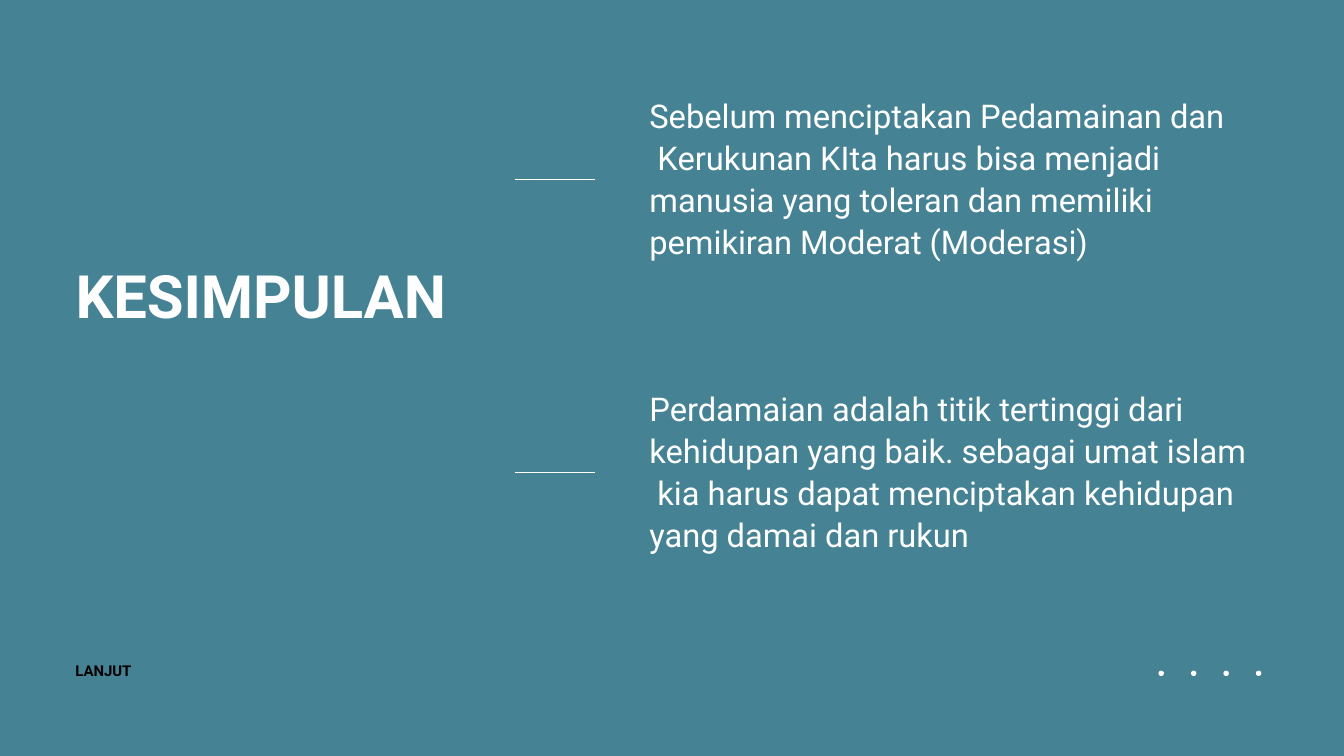
"""Build the KESIMPULAN (conclusion) slide."""
from math import cos, pi, sin

from lxml import etree
from pptx import Presentation
from pptx.dml.color import RGBColor
from pptx.enum.shapes import MSO_CONNECTOR, MSO_SHAPE
from pptx.enum.text import MSO_ANCHOR, MSO_AUTO_SIZE, PP_ALIGN
from pptx.oxml.ns import qn
from pptx.util import Inches, Pt

STRAIGHT, RECT = MSO_CONNECTOR.STRAIGHT, MSO_SHAPE.RECTANGLE
TOP, LEFT = MSO_ANCHOR.TOP, PP_ALIGN.LEFT
NO_FIT = MSO_AUTO_SIZE.NONE

HEADING = "KESIMPULAN"
STATEMENTS = [
    "Sebelum menciptakan Pedamainan dan  Kerukunan KIta harus bisa menjadi  "
    "manusia yang toleran dan memiliki  pemikiran Moderat (Moderasi)",
    "Perdamaian adalah titik tertinggi dari  kehidupan yang baik. sebagai umat islam  "
    "kia harus dapat menciptakan kehidupan  yang damai dan rukun",
]
NEXT_LABEL = "LANJUT"
COLORS = {"teal": "458294", "white": "FFFFFF", "black": "000000"}
FONT = "Roboto"

WIDTH, HEIGHT = 20, 11.25
MARGIN = 1.11
RULE_X, RULE_W, RULE_DROP = 7.66, 1.2, 1.3
TEXT_X, TEXT_WIDTHS, TEXT_H = 9.65, (8.59, 8.92), 2.53
ROW_TOP, ROW_PITCH = 1.37, 4.36
DOTS, DOTS_X, DOTS_Y, DOTS_W, DOT_R = 4, 17.24, 10.02, 1.53, 0.04
DOT_SIDES = 16


def rgb(name):
    return RGBColor.from_string(COLORS[name])


def put_text(sp, text, box, size, color="white", bold=False, line=1.0):
    sp.left, sp.top, sp.width, sp.height = map(Inches, box)
    tf = sp.text_frame
    tf.word_wrap, tf.auto_size, tf.vertical_anchor = True, NO_FIT, TOP
    tf.margin_left = tf.margin_right = tf.margin_bottom = 0
    tf.margin_top = Pt(1)
    p = tf.paragraphs[0]
    p.alignment, p.line_spacing, p.space_before = LEFT, line, Pt(1)
    p._p.get_or_add_pPr().set("marL", str(Pt(1)))
    r = p.add_run()
    r.text = text
    r.font.name, r.font.size, r.font.bold = FONT, Pt(size), bold
    r.font.color.rgb = rgb(color)
    r._r.get_or_add_rPr().set("spc", "-5")


def add_box(slide):
    return slide.shapes.add_textbox(0, 0, 0, 0)


def paint(sp, color):
    sp.shadow.inherit = False
    sp.fill.solid()
    sp.fill.fore_color.rgb = rgb(color)
    sp.line.fill.background()


def add_backdrop(slide):
    sp = slide.shapes.add_shape(RECT, 0, 0, Inches(WIDTH), Inches(HEIGHT))
    paint(sp, "teal")
    tree = slide.shapes._spTree
    tree.remove(sp._element)
    tree.insert(2, sp._element)


def add_rule(slide, y):
    ln = slide.shapes.add_connector(
        STRAIGHT, Inches(RULE_X), Inches(y), Inches(RULE_X + RULE_W), Inches(y))
    ln.line.color.rgb, ln.line.width = rgb("white"), Pt(1.5)
    etree.SubElement(ln._element.spPr, qn("a:effectLst"))


def dot_outline(i):
    x = DOTS_X + DOT_R + i * (DOTS_W - 2 * DOT_R) / (DOTS - 1)
    angles = [2 * pi * k / DOT_SIDES for k in range(DOT_SIDES)]
    return [(Inches(x + DOT_R * cos(a)), Inches(DOTS_Y + DOT_R * sin(a))) for a in angles]


def add_dots(slide):
    first, *others = [dot_outline(i) for i in range(DOTS)]
    fb = slide.shapes.build_freeform(*first[0])
    fb.add_line_segments(first[1:], close=True)
    for points in others:
        fb.move_to(*points[0])
        fb.add_line_segments(points[1:], close=True)
    paint(fb.convert_to_shape(), "white")


def main():
    prs = Presentation()
    prs.slide_width, prs.slide_height = Inches(WIDTH), Inches(HEIGHT)
    slide = prs.slides.add_slide(prs.slide_layouts.get_by_name("Title Only"))

    add_backdrop(slide)
    put_text(slide.shapes.title, HEADING, (MARGIN, 3.83, 5.53, 1.09), 64, bold=True)
    for i, (text, width) in enumerate(zip(STATEMENTS, TEXT_WIDTHS)):
        top = ROW_TOP + i * ROW_PITCH
        add_rule(slide, top + RULE_DROP)
        put_text(add_box(slide), text, (TEXT_X, top, width, TEXT_H), 35, line=1.07)
    put_text(add_box(slide), NEXT_LABEL, (MARGIN, 9.83, 0.86, 0.29), 16,
             color="black", bold=True)
    add_dots(slide)
    prs.save("out.pptx")


if __name__ == "__main__":
    main()
